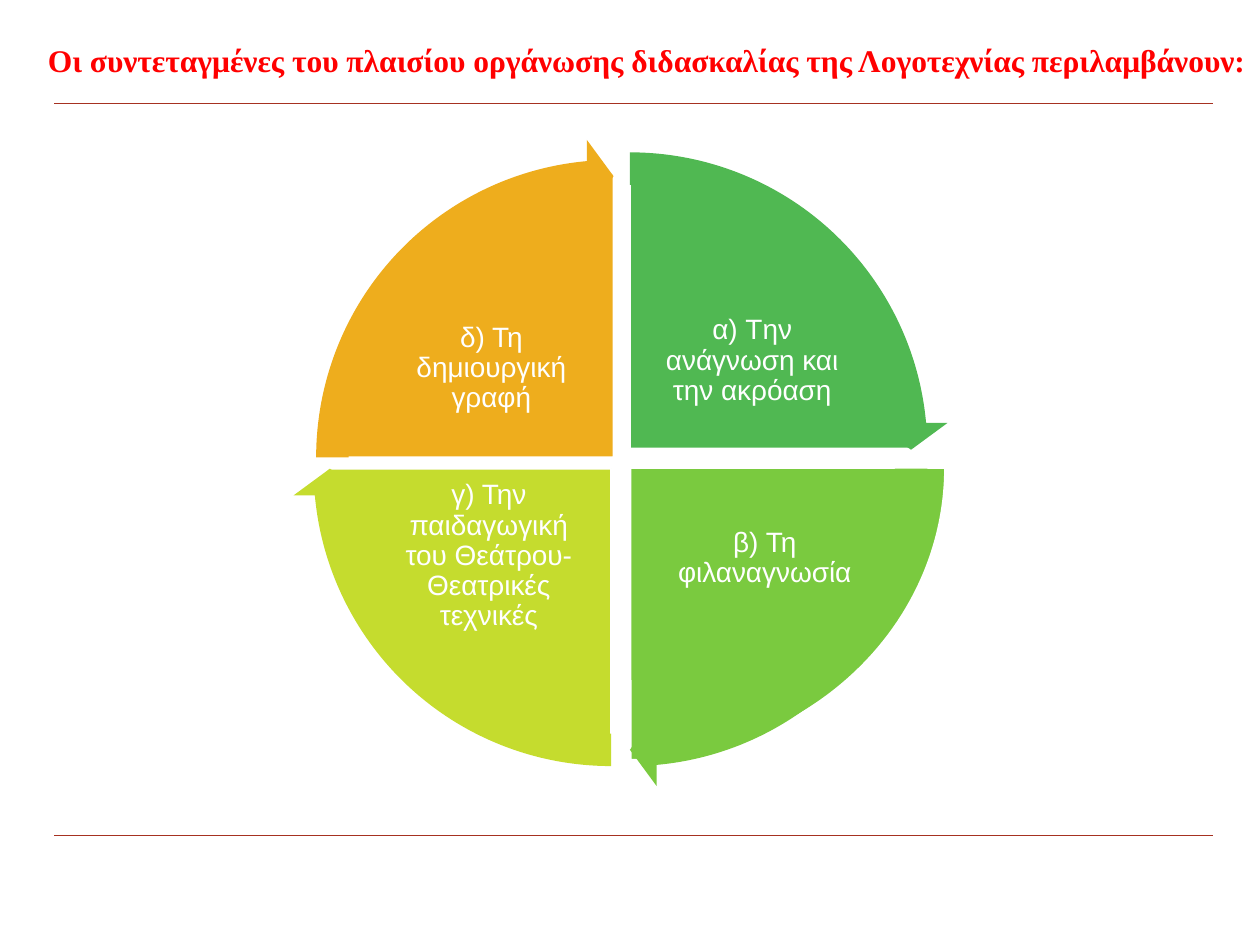
from lxml.etree import SubElement
from pptx import Presentation
from pptx.dml.color import RGBColor
from pptx.enum.shapes import MSO_CONNECTOR, MSO_SHAPE
from pptx.enum.text import MSO_ANCHOR, PP_ALIGN
from pptx.oxml.ns import qn
from pptx.util import Inches, Pt


def color(hex_code):
    return RGBColor.from_string(hex_code)


def format_text(frame, text, align, anchor, font_values):
    frame.word_wrap = True
    frame.vertical_anchor = anchor
    paragraph = frame.paragraphs[0]
    paragraph.alignment = align
    paragraph.line_spacing = 0.9
    run = paragraph.add_run()
    run.text = text
    for name, value in font_values.items():
        if name == "color":
            run.font.color.rgb = color(value)
        else:
            setattr(run.font, name, value)


prs = Presentation()
prs.slide_width, prs.slide_height = Inches(10), Inches(7.5)
slide = prs.slides.add_slide(prs.slide_layouts[5])
shapes = slide.shapes

# Rules above and below the cycle
for rule_y in (6.63, 0.82):
    rule = shapes.add_connector(MSO_CONNECTOR.STRAIGHT, Inches(0.43), Inches(rule_y),
                                Inches(9.63), Inches(rule_y))
    rule.line.color.rgb = color("A63121")
    rule.line.width = Pt(0.5)
    SubElement(rule._element.spPr, qn("a:effectLst"))

# Title
title = shapes.title
title_place = {"left": 0.28, "top": 0.13, "width": 9.72, "height": 0.55}
for side, value in title_place.items():
    setattr(title, side, Inches(value))
format_text(title.text_frame,
            "Οι συντεταγμένες του πλαισίου οργάνωσης διδασκαλίας της Λογοτεχνίας περιλαμβάνουν:",
            PP_ALIGN.LEFT, MSO_ANCHOR.BOTTOM,
            {"name": "Times New Roman", "size": Pt(18), "bold": True, "color": "FF0000"})

# Quarters: text, fill, start angle, pie box, label box, arrow corner
QUARTER_TURN = 54  # 90 degrees in adjustment units
quarters = [
    ("α) Tην ανάγνωση και την ακρόαση", "50B852", 162,
     (2.75, 1.31, 4.5, 4.5), (5.14, 2.25, 1.66, 1.23), (2.47, 1.04)),
    ("β) Τη φιλαναγνωσία", "7ACA3F", 0,
     (2.51, 1.4, 4.99, 4.63), (5.15, 3.8, 1.84, 1.27), (2.47, 1.19)),
    ("γ) Την παιδαγωγική του Θεάτρου-Θεατρικές τεχνικές", "C5DC2E", 54,
     (2.6, 1.47, 4.5, 4.5), (3.05, 3.8, 1.66, 1.23), (2.32, 1.19)),
    ("δ) Τη δημιουργική γραφή", "EEAD1D", 108,
     (2.62, 1.38, 4.5, 4.5), (3.07, 2.31, 1.66, 1.23), (2.34, 1.1)),
]
label_font = {"name": "Arial", "size": Pt(16), "color": "FFFFFF"}

for text, fill, start, pie_box, label_box, arrow_corner in quarters:
    quarter = shapes.add_shape(MSO_SHAPE.PIE, *map(Inches, pie_box))
    quarter.shadow.inherit = False
    quarter.adjustments[0] = start
    quarter.adjustments[1] = (start + QUARTER_TURN) % (4 * QUARTER_TURN)
    quarter.fill.solid()
    quarter.fill.fore_color.rgb = color(fill)
    quarter.line.color.rgb = color("FFFFFF")
    quarter.line.width = Pt(1)

    label = shapes.add_textbox(*map(Inches, label_box)).text_frame
    for side in ("left", "right", "top", "bottom"):
        setattr(label, f"margin_{side}", Inches(0.02))
    format_text(label, text, PP_ALIGN.CENTER, MSO_ANCHOR.MIDDLE, label_font)

# Arrows around the rim, in front of every quarter
for text, fill, start, pie_box, label_box, arrow_corner in quarters:
    arrow = shapes.add_shape(MSO_SHAPE.CIRCULAR_ARROW, *map(Inches, arrow_corner),
                             Inches(5.06), Inches(5.06))
    arrow.shadow.inherit = False
    for index, value in enumerate((0.051, 3.275, start + 50.725, start, 0.059)):
        arrow.adjustments[index] = value
    arrow.fill.solid()
    arrow.fill.fore_color.rgb = color(fill)
    arrow.line.fill.background()

prs.save("out.pptx")
